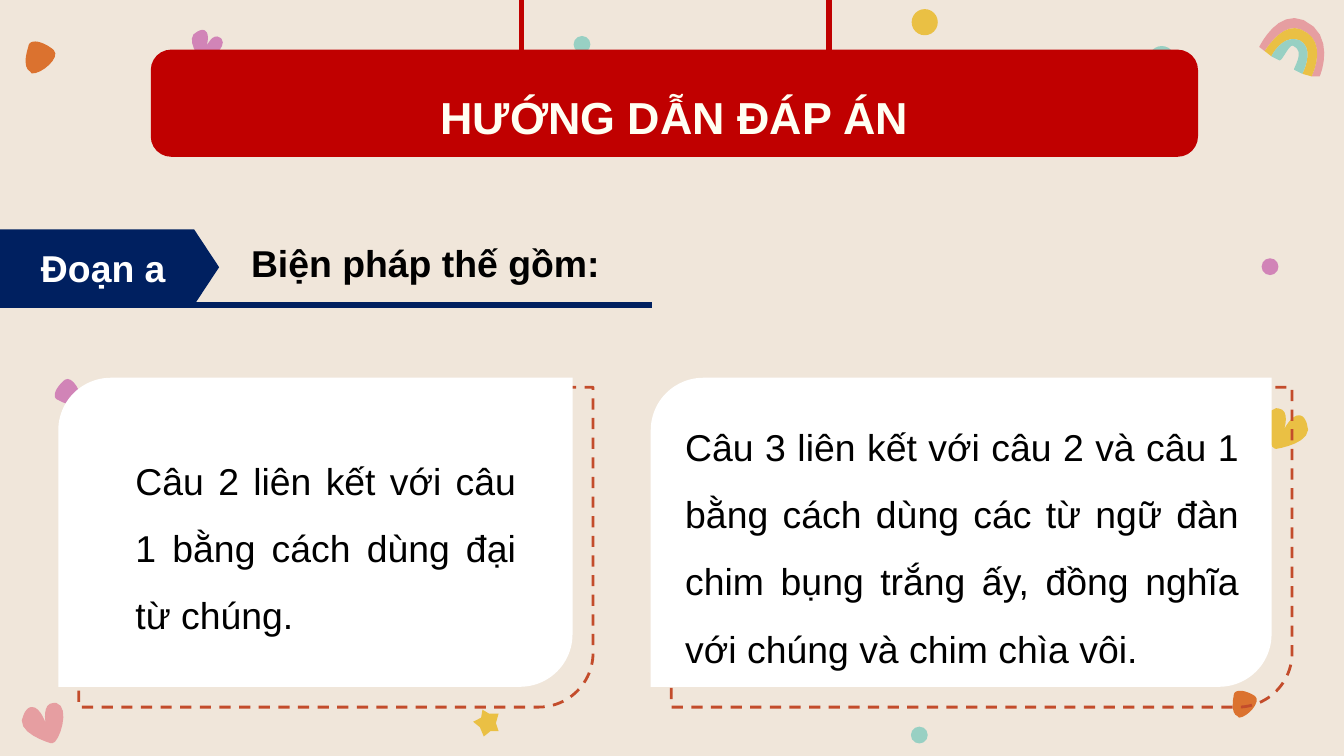
import itertools
import math

import lxml.etree
import pptx
import pptx.dml.color
import pptx.enum.dml
import pptx.enum.shapes
import pptx.enum.text
import pptx.oxml.ns
import pptx.util

Pt = pptx.util.Pt
RGBColor = pptx.dml.color.RGBColor
MSO_SHAPE = pptx.enum.shapes.MSO_SHAPE
PP_ALIGN = pptx.enum.text.PP_ALIGN
MSO_ANCHOR = pptx.enum.text.MSO_ANCHOR

CREAM = RGBColor(0xF0, 0xE6, 0xDA)
IVORY = RGBColor(0xFF, 0xFF, 0xF3)
WHITE = RGBColor(0xFF, 0xFF, 0xFF)
BLACK = RGBColor(0x00, 0x00, 0x00)
RED = RGBColor(0xC0, 0x00, 0x00)
NAVY = RGBColor(0x00, 0x20, 0x60)
RUST = RGBColor(0xC3, 0x4C, 0x2B)
ORANGE = RGBColor(0xDB, 0x72, 0x2F)
PURPLE = RGBColor(0xD1, 0x84, 0xB7)
PINK = RGBColor(0xE6, 0x9E, 0xA1)
TEAL = RGBColor(0x98, 0xD0, 0xC3)
GOLD = RGBColor(0xEA, 0xC0, 0x44)

# Outlines around their own centre: a start point, then segments.
# One point is a straight line; three points are a cubic curve.
PEBBLE = [
    [(-2.9, -7.2)],
    [(-5, -7.2), (-6.5, -6.5), (-6.5, -4.3)],
    [(-6.5, -4.3), (-8.6, 5), (-4.3, 6.5)],
    [(-3.6, 7.2)],
    [(0.7, 7.2), (8.6, -1.4), (5, -4.3)],
    [(2.9, -5.8), (-0.7, -7.2), (-2.9, -7.2)],
]
HEART = [
    [(6.5, -10.8)],
    [(0, -10.8), (2.2, 0), (2.2, 0)],
    [(2.2, 0), (-0.7, -8.6), (-5, -8.6)],
    [(-6.5, -8.6), (-7.9, -7.9), (-9.4, -5)],
    [(-15.8, 5), (5, 10.8), (5, 10.8)],
    [(5.8, 10.8)],
    [(9.4, 10.8), (15.8, -8.6), (7.9, -10.8)],
]
STAR = [[point] for point in (
    (-1.8, -7.2), (-2.5, -2.9), (-6.8, -0.7), (-3.2, 2.2), (-1.1, 7.2),
    (2.5, 4.3), (6.8, 4.3), (5.4, 0), (6.8, -5), (1.8, -5))]
RAINBOW_EDGES = [
    [(-20.9, 0), (-20.2, -1.4), (-10.8, -20.2), (2.9, -14.4),
     (20.2, -6.5), (12.2, 14.4), (11.5, 15.8)],
    [(-18, 2.2), (-15.1, -2.2), (-7.2, -13), (1.4, -9.4),
     (12.2, -5), (11.5, 5.8), (7.2, 15.8)],
    [(-14.4, 5), (-12.2, 0.7), (-6.5, -6.5), (0.7, -3.6),
     (7.9, 0), (4.3, 10.1), (2.2, 14.4)],
    [(-10.1, 7.2), (-8.6, 7.9), (-5, -1.4), (-2.9, -0.7),
     (4.3, 2.2), (-2.9, 11.5), (-2.2, 12.2)],
]


def draw_outline(outline, color, x, y, scale=1, angle=0, mirror=1):
    """Draw an outline centred on x, y; mirror=-1 flips it left to right."""
    points = [outline[0][0]]
    for segment in outline[1:]:
        if len(segment) == 1:
            points.append(segment[0])
            continue
        corners = [points[-1], *segment]
        for step in range(1, 9):
            t = step / 8
            weights = ((1 - t) ** 3, 3 * t * (1 - t) ** 2, 3 * t * t * (1 - t), t ** 3)
            points.append(tuple(
                sum(weight * corner[axis] for weight, corner in zip(weights, corners))
                for axis in (0, 1)))
    cosine = scale * math.cos(math.radians(angle))
    sine = scale * math.sin(math.radians(angle))
    placed = [(Pt(x + mirror * px * cosine - py * sine),
               Pt(y + mirror * px * sine + py * cosine)) for px, py in points]
    builder = slide.shapes.build_freeform(*placed[0])
    builder.add_line_segments(placed[1:], close=True)
    shape = builder.convert_to_shape()
    shape.shadow.inherit = False
    shape.fill.solid()
    shape.fill.fore_color.rgb = color
    shape.line.fill.background()


def write_text(shape, text, size=20, color=BLACK, bold=False,
               align=PP_ALIGN.JUSTIFY, anchor=MSO_ANCHOR.TOP, spacing=1.0):
    frame = shape.text_frame
    frame.word_wrap = True
    frame.auto_size = pptx.enum.text.MSO_AUTO_SIZE.NONE
    frame.vertical_anchor = anchor
    paragraph = frame.paragraphs[0]
    paragraph.alignment = align
    paragraph.line_spacing = spacing
    run = paragraph.add_run()
    run.text = text
    run.font.name = "Arial"
    run.font.size = Pt(size)
    run.font.bold = bold
    run.font.color.rgb = color


presentation = pptx.Presentation()
presentation.slide_width = Pt(720)
presentation.slide_height = Pt(405)
slide = presentation.slides.add_slide(presentation.slide_layouts[5])
slide.background.fill.solid()
slide.background.fill.fore_color.rgb = CREAM

# Scattered decorations
for x, y, diameter, color in [
        (680.4, 142.9, 9, PURPLE), (622.4, 31.7, 14, TEAL), (495.4, 11.9, 14, GOLD),
        (492.5, 393.8, 9, TEAL), (311.8, 23.8, 9, TEAL)]:
    dot = slide.shapes.add_shape(MSO_SHAPE.OVAL, Pt(x - diameter / 2), Pt(y - diameter / 2),
                                 Pt(diameter), Pt(diameter))
    dot.shadow.inherit = False
    dot.fill.solid()
    dot.fill.fore_color.rgb = color
    dot.line.fill.background()

draw_outline(PEBBLE, ORANGE, 667.4, 377.3)
draw_outline(PEBBLE, PURPLE, 37.4, 209.5, angle=288)
draw_outline(PEBBLE, ORANGE, 22.3, 31.3, scale=1.2, angle=6.7)
draw_outline(HEART, PINK, 22.3, 387.4)
draw_outline(HEART, GOLD, 690.1, 230.4, angle=7.4, mirror=-1)
draw_outline(HEART, PURPLE, 109.4, 23.8, scale=0.73, angle=35.6)
draw_outline(STAR, GOLD, 260.3, 387.4)
for (outer, inner), color in zip(itertools.pairwise(RAINBOW_EDGES), (PINK, GOLD, TEAL)):
    band = [outer[:1], outer[1:4], outer[4:], inner[6:], inner[5:2:-1], inner[2::-1]]
    draw_outline(band, color, 695.5, 25.2)

# Banner hangers and the underline of the section heading
for x1, y1, x2, y2, color in [
        (279.4, 0, 279.4, 26.6, RED), (444.2, 0, 444.2, 26.6, RED),
        (0, 163.4, 349.2, 163.4, NAVY)]:
    connector = slide.shapes.add_connector(
        pptx.enum.shapes.MSO_CONNECTOR.STRAIGHT, Pt(x1), Pt(y1), Pt(x2), Pt(y2))
    connector.line.color.rgb = color
    connector.line.width = Pt(3)
    lxml.etree.SubElement(connector._element.spPr, pptx.oxml.ns.qn("a:effectLst"))

# Banner, section tag and cards: fill or dashed outline
CARD_TOP, CARD_HEIGHT = 202.4, 165.6
panels = [
    (MSO_SHAPE.ROUNDED_RECTANGLE, 80.8, 26.6, 561, 57.4, RED, 0.19),
    (MSO_SHAPE.PENTAGON, 0, 122.9, 117.4, 40.5, NAVY, 0.33),
]
for left, width in [(31.2, 275.5), (348.6, 332.6)]:
    panels += [
        (MSO_SHAPE.ROUND_2_DIAG_RECTANGLE, left + 11, CARD_TOP + 5, width, 171.4, None, 0.17),
        (MSO_SHAPE.ROUND_2_DIAG_RECTANGLE, left, CARD_TOP, width, CARD_HEIGHT, WHITE, 0.17),
    ]
drawn_panels = []
for kind, left, top, width, height, color, rounding in panels:
    panel = slide.shapes.add_shape(kind, Pt(left), Pt(top), Pt(width), Pt(height))
    panel.shadow.inherit = False
    panel.adjustments[0] = rounding
    if color is None:
        panel.fill.background()
        panel.line.color.rgb = RUST
        panel.line.width = Pt(1.5)
        panel.line.dash_style = pptx.enum.dml.MSO_LINE.DASH
    else:
        panel.fill.solid()
        panel.fill.fore_color.rgb = color
        panel.line.fill.background()
    drawn_panels.append(panel)
banner, section_tag = drawn_panels[:2]

title = slide.shapes.title
title.left, title.top = banner.left, banner.top
title.width, title.height = banner.width, banner.height
banner._element.addnext(title._element)
write_text(title, "HƯỚNG DẪN ĐÁP ÁN", size=24, color=IVORY, bold=True,
           align=PP_ALIGN.CENTER, anchor=MSO_ANCHOR.MIDDLE, spacing=1.5)
write_text(section_tag, "Đoạn a", color=WHITE, bold=True,
           align=PP_ALIGN.CENTER, anchor=MSO_ANCHOR.MIDDLE)

for left, top, width, height, text, bold, spacing in [
        (127.4, 125.3, 221.8, 31.5, "Biện pháp thế gồm:", True, 1.0),
        (65.5, 229.7, 218.2, 111.6,
         "Câu 2 liên kết với câu 1 bằng cách dùng đại từ chúng.", False, 1.5),
        (360, 211.7, 311, 148.3,
         "Câu 3 liên kết với câu 2 và câu 1 bằng cách dùng các từ ngữ đàn chim bụng "
         "trắng ấy, đồng nghĩa với chúng và chim chìa vôi.", False, 1.5)]:
    text_box = slide.shapes.add_textbox(Pt(left), Pt(top), Pt(width), Pt(height))
    write_text(text_box, text, bold=bold, spacing=spacing)

presentation.save("out.pptx")
